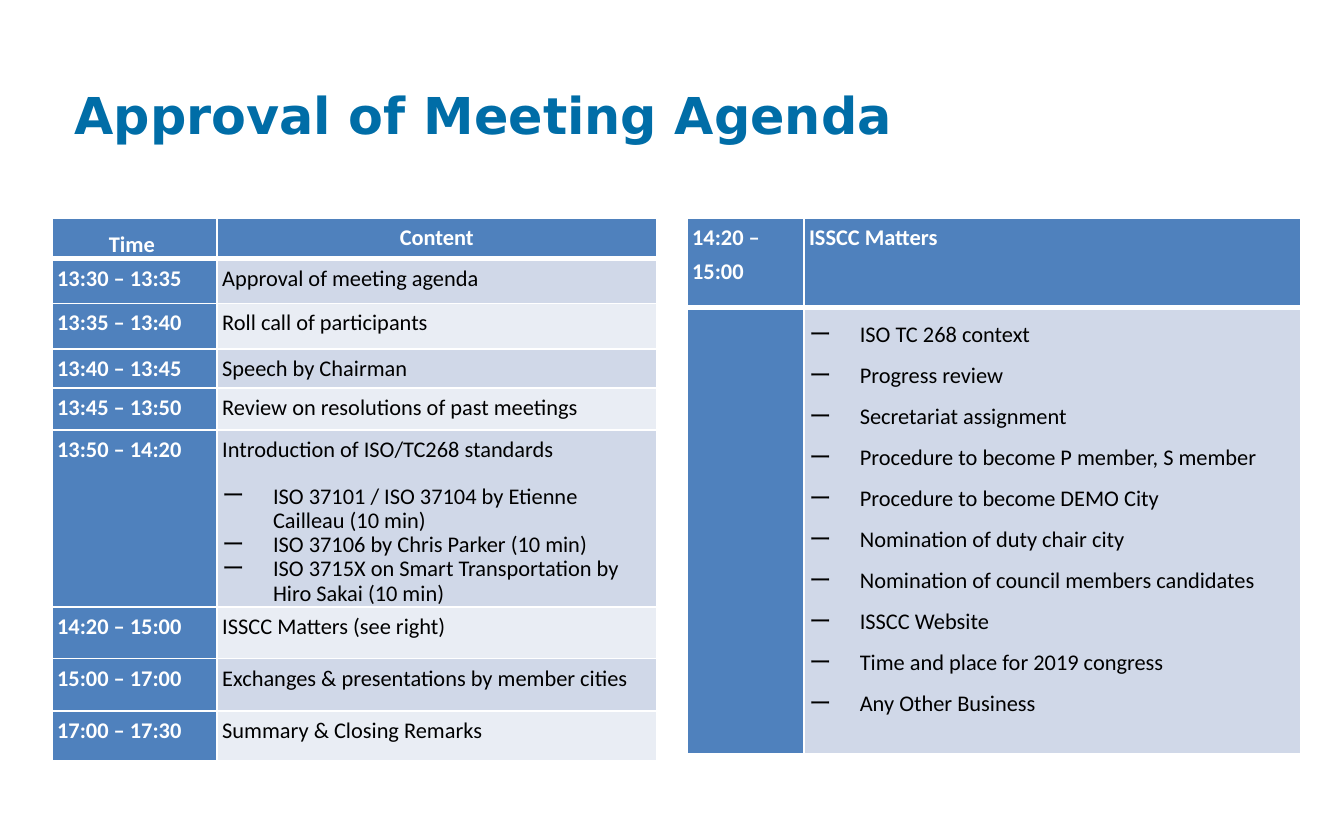
from lxml.etree import SubElement
from pptx import Presentation
from pptx.dml.color import RGBColor
from pptx.enum.text import MSO_ANCHOR, PP_ALIGN
from pptx.oxml.ns import qn
from pptx.util import Cm, Pt

BLUE, BAND, PALE = "4F81BD", "D0D8E8", "E9EDF4"
WHITE, BLACK, TEAL = "FFFFFF", "000000", "006DA7"

AGENDA = [
    ("13:30 – 13:35", "Approval of meeting agenda"),
    ("13:35 – 13:40", "Roll call of participants"),
    ("13:40 – 13:45", "Speech by Chairman"),
    ("13:45 – 13:50", "Review on resolutions of past meetings"),
    ("13:50 – 14:20", "Introduction of ISO/TC268 standards"),
    ("14:20 – 15:00", "ISSCC Matters (see right)"),
    ("15:00 – 17:00", "Exchanges & presentations by member cities"),
    ("17:00 – 17:30", "Summary & Closing Remarks"),
]
TALKS = [
    "ISO 37101 / ISO 37104 by Etienne Cailleau (10 min)",
    "ISO 37106 by Chris Parker (10 min)",
    "ISO 3715X on Smart Transportation by Hiro Sakai (10 min)",
]
MATTERS = [
    "ISO TC 268 context",
    "Progress review",
    "Secretariat assignment",
    "Procedure to become P member, S member",
    "Procedure to become DEMO City",
    "Nomination of duty chair city",
    "Nomination of council members candidates",
    "ISSCC Website",
    "Time and place for 2019 congress",
    "Any Other Business",
]


def paint(fmt, color):
    """Give a font or a solid fill its hex colour."""
    fmt.rgb = RGBColor.from_string(color)


def style(par, color, bold, size=12, face="Calibri"):
    """Format every run of a paragraph."""
    for run in par.runs:
        run.font.size, run.font.name, run.font.bold = Pt(size), face, bold
        paint(run.font.color, color)


def edge(cell, sides):
    """Draw white cell borders, with widths in points by side."""
    props = cell._tc.get_or_add_tcPr()
    for side in "LRTB":
        line = SubElement(props, qn(f"a:ln{side}"), w=str(Pt(sides.get(side, 1))))
        solid = SubElement(line, qn("a:solidFill"))
        SubElement(solid, qn("a:srgbClr"), val=WHITE)


def dash(par):
    """Give a paragraph a hanging dash bullet."""
    props = par._p.get_or_add_pPr()
    props.set("marL", str(Cm(0.96)))
    props.set("indent", str(Cm(-0.96)))
    SubElement(props, qn("a:buFont"), typeface="Calibri")
    SubElement(props, qn("a:buChar"), char="ー")


def label(cell, text, color=BLACK, bold=False):
    """Write the lead line of a cell and return its paragraph."""
    par = cell.text_frame.paragraphs[0]
    par.text = text
    par.line_spacing, par.space_after = Pt(18), Pt(12)
    style(par, color, bold)
    return par


def items(cell, texts, gap):
    """Add dashed lines to a cell, filling an empty first line."""
    frame = cell.text_frame
    for text in texts:
        par = frame.add_paragraph() if frame.text else frame.paragraphs[0]
        par.text = text
        dash(par)
        par.line_spacing = gap
        style(par, BLACK, False)
    par.space_after = Pt(6)


def grid(slide, x, y, cols, rows):
    """Place a table with a blue head row and first column."""
    frame = slide.shapes.add_table(
        len(rows), len(cols), Cm(x), Cm(y), Cm(sum(cols)), Cm(sum(rows)))
    table = frame.table
    table.horz_banding = False
    for col, width in zip(table.columns, cols):
        col.width = Cm(width)
    for r, height in enumerate(rows):
        table.rows[r].height = Cm(height)
        for c in range(len(cols)):
            cell = table.cell(r, c)
            cell.margin_left = cell.margin_right = Cm(0.1)
            cell.margin_top = cell.margin_bottom = 0
            edge(cell, {0: {"B": 3}, 1: {"T": 3}}.get(r, {}))
            cell.fill.solid()
            band = BAND if r % 2 else PALE
            paint(cell.fill.fore_color, BLUE if r == 0 or c == 0 else band)
    return table


def agenda(slide, x, y):
    """Build the timetable."""
    rows = [0.76, 0.84, 0.86, 0.74, 0.79, 3.35, 0.97, 0.99, 0.94]
    table = grid(slide, x, y, [3.12, 8.31], rows)
    time = label(table.cell(0, 0), "Time ", WHITE, True)
    time.line_spacing, time.space_after = 1.5, None
    head = label(table.cell(0, 1), "Content", WHITE, True)
    time.alignment = head.alignment = PP_ALIGN.CENTER
    for r, (slot, topic) in enumerate(AGENDA, 1):
        label(table.cell(r, 0), slot, WHITE, True)
        label(table.cell(r, 1), topic)
    items(table.cell(5, 1), TALKS, Pt(13))


def matters(slide, x, y):
    """Build the detail table for one agenda slot."""
    table = grid(slide, x, y, [2.21, 9.4], [1.7, 8.43])
    label(table.cell(0, 0), "14:20 – 15:00", WHITE, True)
    label(table.cell(0, 1), "ISSCC Matters", WHITE, True)
    items(table.cell(1, 1), MATTERS, 1.5)


def title(slide, x, y, w, h):
    """Place the slide title."""
    frame = slide.shapes.add_textbox(Cm(x), Cm(y), Cm(w), Cm(h)).text_frame
    frame.word_wrap = True
    frame.vertical_anchor = MSO_ANCHOR.TOP
    frame.text = "Approval of Meeting Agenda"
    style(frame.paragraphs[0], TEAL, True, 27.2, "DejaVu Sans")


def main():
    """Build and save the slide."""
    deck = Presentation()
    deck.slide_width, deck.slide_height = Cm(25.4), Cm(15.88)
    slide = deck.slides.add_slide(deck.slide_layouts[6])
    agenda(slide, 0.98, 4.12)
    matters(slide, 12.98, 4.12)
    title(slide, 1.16, 1.45, 16.94, 1.5)
    deck.save("out.pptx")


if __name__ == "__main__":
    main()
